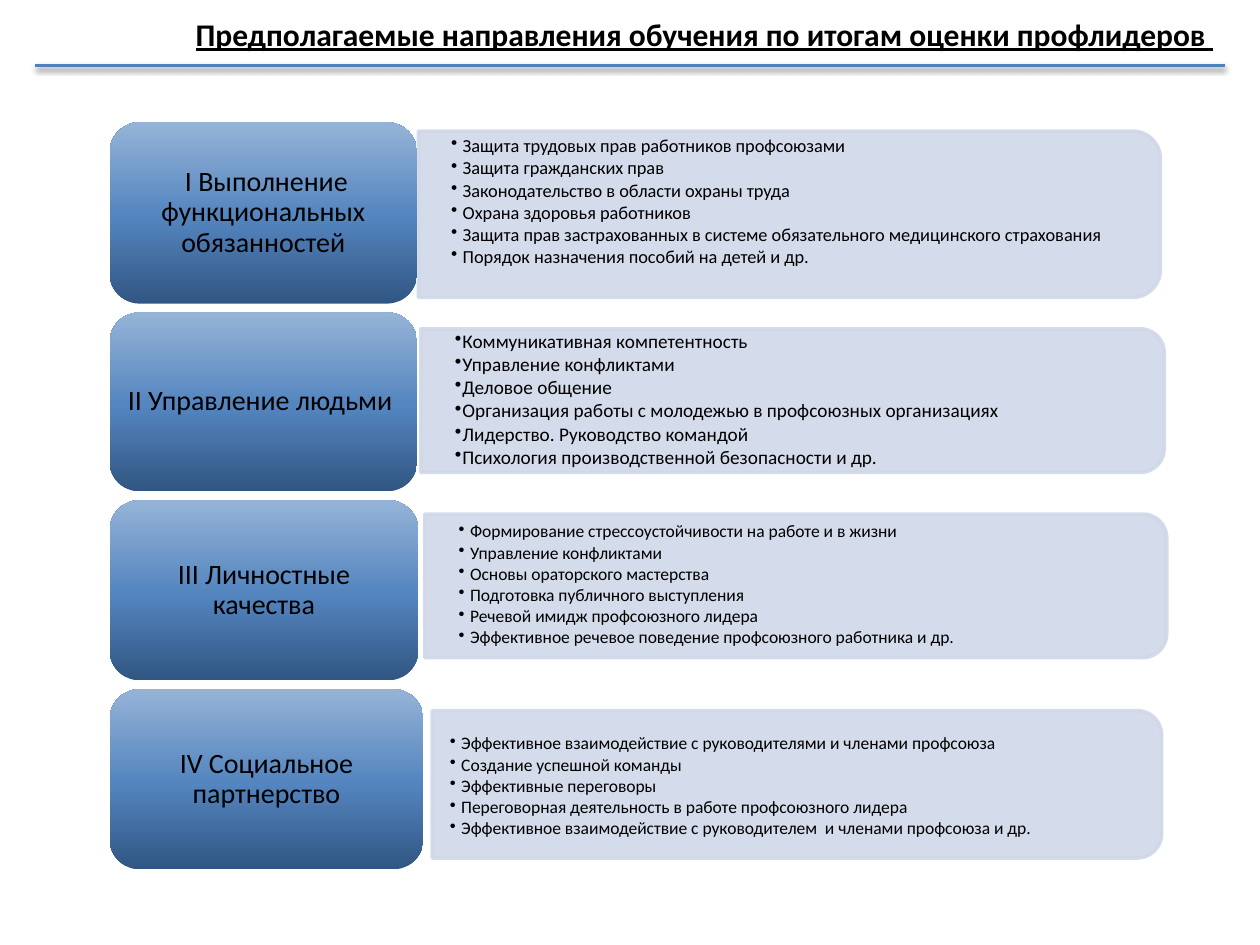
from copy import deepcopy

from lxml.etree import SubElement
from pptx import Presentation
from pptx.dml.color import RGBColor
from pptx.enum.shapes import MSO_CONNECTOR as Connector, MSO_SHAPE as Shape
from pptx.enum.text import MSO_ANCHOR as Anchor, MSO_AUTO_SIZE as AutoSize, PP_ALIGN as Align
from pptx.oxml.ns import qn
from pptx.util import Inches, Pt

COLORS = {
    "text": "000000", "rule": "4F81BD", "panel": "D0D8E8",
    "dark": "315683", "middle": "5485BF", "light": "95B3D7",
}
GRADIENT = [(0, "dark"), (0.48, "middle"), (1, "light")]
CARD_LEFT = 0.87


def rgb(key):
    return RGBColor.from_string(COLORS[key])


def add_text(paragraph, text, size):
    run = paragraph.add_run()
    run.text = text
    run.font.name = "Calibri"
    run.font.size = Pt(size)
    run.font.color.rgb = rgb("text")
    return run


directions = [
    {
        "name": " I Выполнение функциональных обязанностей",
        "card": (0.97, 2.44, 1.44),
        "panel": (3.32, 1.04, 5.89, 1.32),
        "list": (3.31, 1.01, 5.83, 1.19), "inset": 0.27, "size": 10.5,
        "topics": [
            " Защита трудовых прав работников профсоюзами",
            " Защита гражданских прав",
            " Законодательство в области охраны труда",
            " Охрана здоровья работников",
            " Защита прав застрахованных в системе обязательного медицинского страхования",
            " Порядок назначения пособий на детей и др.",
        ],
    },
    {
        "name": "II Управление людьми ",
        "card": (2.48, 2.44, 1.42),
        "panel": (3.34, 2.61, 5.9, 1.14),
        "list": (3.34, 2.58, 5.84, 1.19), "inset": 0.27, "size": 11,
        "topics": [
            "Коммуникативная компетентность",
            "Управление конфликтами",
            "Деловое общение",
            "Организация работы с молодежью в профсоюзных организациях",
            "Лидерство. Руководство командой",
            "Психология производственной безопасности и др.",
        ],
    },
    {
        "name": "III Личностные качества",
        "card": (3.97, 2.45, 1.43),
        "panel": (3.37, 4.08, 5.89, 1.14),
        "list": (3.37, 4.13, 5.84, 1.03), "inset": 0.27, "size": 10,
        "topics": [
            " Формирование стрессоустойчивости на работе и в жизни",
            " Управление конфликтами",
            " Основы ораторского мастерства",
            " Подготовка публичного выступления",
            " Речевой имидж профсоюзного лидера",
            " Эффективное речевое поведение профсоюзного работника и др.",
        ],
    },
    {
        "name": "IV Социальное партнерство",
        "card": (5.47, 2.49, 1.43),
        "panel": (3.43, 5.64, 5.79, 1.17),
        "list": (3.54, 5.66, 5.47, 1.17), "inset": 0.03, "size": 10,
        "topics": [
            " Эффективное взаимодействие с руководителями и членами профсоюза",
            " Создание успешной команды",
            " Эффективные переговоры",
            " Переговорная деятельность в работе профсоюзного лидера",
            " Эффективное взаимодействие с руководителем  и членами профсоюза и др.",
        ],
    },
]

presentation = Presentation()
presentation.slide_width = Inches(10)
presentation.slide_height = Inches(7.5)
slide = presentation.slides.add_slide(presentation.slide_layouts[6])
shapes = slide.shapes

rule = shapes.add_connector(Connector.STRAIGHT, Inches(0.28), Inches(0.52), Inches(9.72), Inches(0.52))
rule.line.color.rgb = rgb("rule")
rule.line.width = Pt(2)
effects = SubElement(rule._element.spPr, qn("a:effectLst"))
shadow = SubElement(effects, qn("a:outerShdw"), blurRad=str(Pt(3.1)), dist=str(Pt(1.6)),
                    dir="5400000", rotWithShape="0")
shadow_color = SubElement(shadow, qn("a:srgbClr"), val=COLORS["text"])
SubElement(shadow_color, qn("a:alpha"), val="38000")

title = shapes.add_textbox(Inches(0.29), Inches(0.07), Inches(9.44), Inches(0.71))
title.text_frame.word_wrap = True
heading = title.text_frame.paragraphs[0]
heading.alignment = Align.RIGHT
heading_run = add_text(heading, "Предполагаемые направления обучения по итогам оценки профлидеров ", 18)
heading_run.font.bold = True
heading_run.font.underline = True

for direction in directions:
    left, top, width, height = direction["panel"]
    panel = shapes.add_shape(
        Shape.ROUND_2_SAME_RECTANGLE,
        Inches(left + (width - height) / 2), Inches(top + (height - width) / 2),
        Inches(height), Inches(width))
    panel.rotation = 90
    panel.shadow.inherit = False
    panel.fill.solid()
    panel.fill.fore_color.rgb = rgb("panel")
    panel.line.color.rgb = rgb("panel")
    panel.line.width = Pt(2)
    for color in panel._element.spPr.iter(qn("a:srgbClr")):
        SubElement(color, qn("a:alpha"), val="90000")

    topic_list = shapes.add_textbox(*map(Inches, direction["list"]))
    frame = topic_list.text_frame
    frame.word_wrap = True
    frame.vertical_anchor = Anchor.MIDDLE
    frame.margin_left = frame.margin_right = Inches(direction["inset"])
    frame.margin_top = frame.margin_bottom = 0
    for index, topic in enumerate(direction["topics"]):
        paragraph = frame.add_paragraph() if index else frame.paragraphs[0]
        paragraph.level = 1
        paragraph.line_spacing = 0.9
        paragraph.space_after = Pt(direction["size"] * 0.13)
        properties = paragraph._p.get_or_add_pPr()
        properties.set("marL", str(Inches(0.06)))
        properties.set("indent", str(Inches(-0.06)))
        SubElement(properties, qn("a:buChar"), char="•")
        add_text(paragraph, topic, direction["size"])

    top, width, height = direction["card"]
    card = shapes.add_shape(Shape.ROUNDED_RECTANGLE, Inches(CARD_LEFT), Inches(top), Inches(width), Inches(height))
    card.shadow.inherit = False
    card.line.fill.background()
    card.fill.gradient()
    card.fill.gradient_angle = 90
    stop_list = next(card._element.spPr.iter(qn("a:gsLst")))
    stop_list.append(deepcopy(stop_list[0]))
    for stop, (position, key) in zip(card.fill.gradient_stops, GRADIENT):
        stop.position = position
        stop.color.rgb = rgb(key)
    frame = card.text_frame
    frame.word_wrap = True
    frame.auto_size = AutoSize.NONE
    frame.vertical_anchor = Anchor.MIDDLE
    frame.margin_left = frame.margin_right = Inches(0.07)
    frame.margin_top = frame.margin_bottom = Inches(0.03)
    paragraph = frame.paragraphs[0]
    paragraph.alignment = Align.CENTER
    paragraph.line_spacing = 0.9
    add_text(paragraph, direction["name"], 16)

presentation.save("out.pptx")
